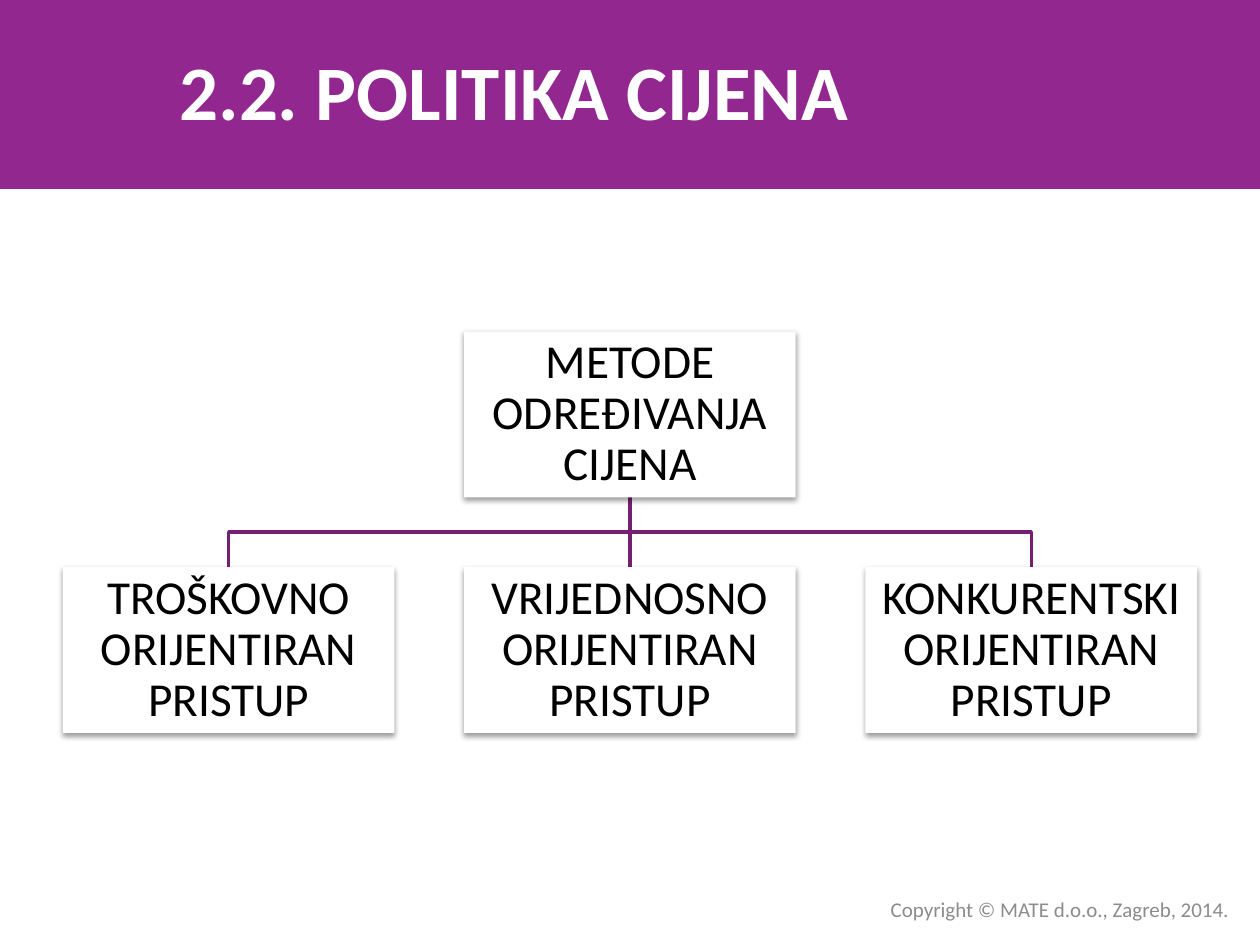
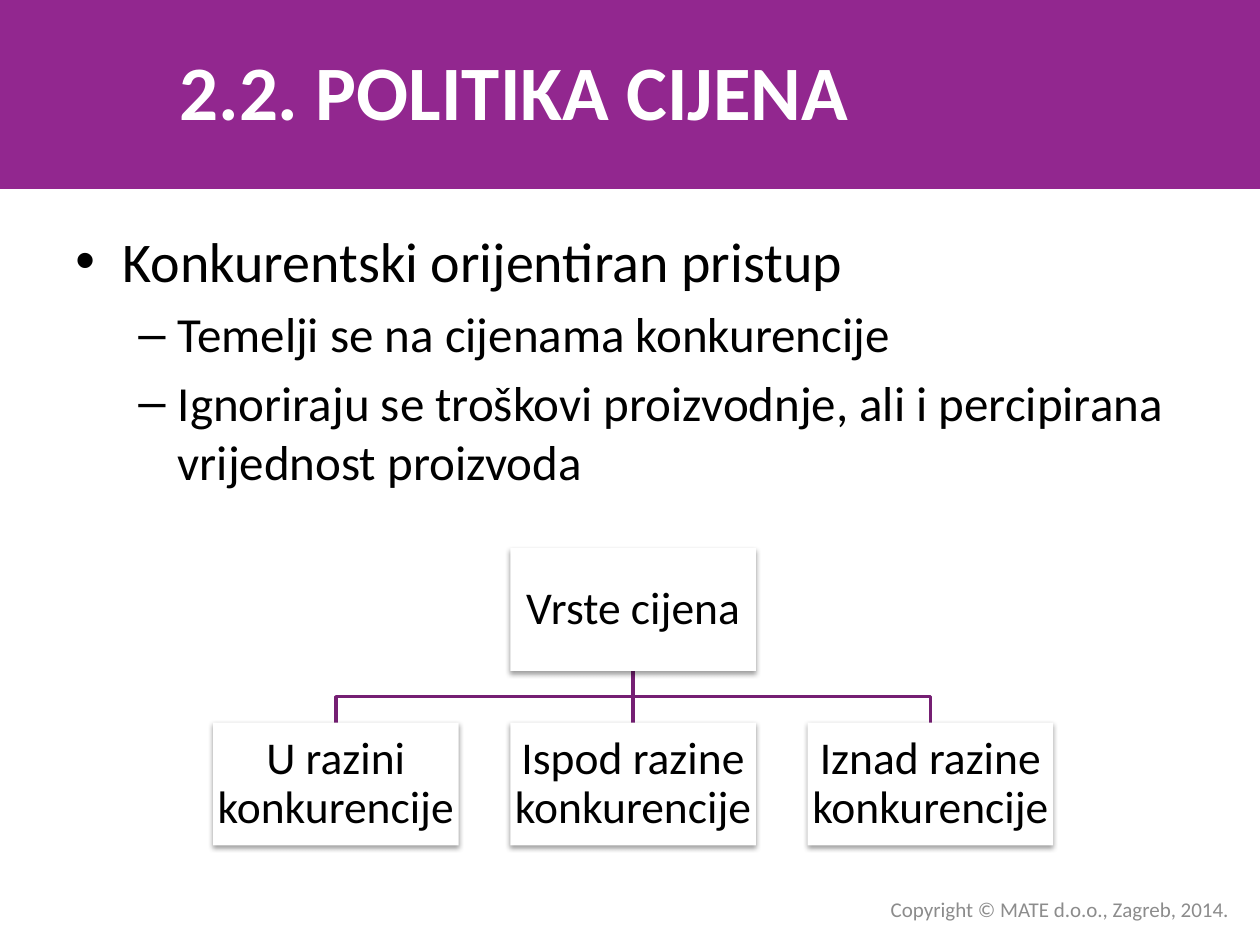
from dataclasses import dataclass

import lxml.etree
import pptx
import pptx.dml.color
import pptx.enum.shapes
import pptx.enum.text
import pptx.oxml.ns
import pptx.util

Pt = pptx.util.Pt
Align = pptx.enum.text.PP_ALIGN
Anchor = pptx.enum.text.MSO_ANCHOR


@dataclass(frozen=True)
class Theme:
    font: str = "Calibri"
    band: str = "92278F"
    link: str = "751F73"
    paper: str = "FFFFFF"
    ink: str = "000000"
    muted: str = "8C8C8C"
    title_size: float = 44
    topic_size: float = 32
    detail_size: float = 28
    footer_size: float = 12
    link_width: float = 2


@dataclass(frozen=True)
class Bullet:
    text: str
    level: int = 0


@dataclass(frozen=True)
class BulletStyle:
    mark: str
    size: float
    margin: float
    hanging: float


@dataclass(frozen=True)
class Tree:
    root: str
    branches: tuple[str, ...]
    centre: float
    top: float
    box_width: float
    size: float


THEME = Theme()
TITLE = "2.2. POLITIKA CIJENA"
FOOTER = "Copyright © MATE d.o.o., Zagreb, 2014."
COLUMN_STEP = 1.21
ROW_STEP = 1.42
BULLET_STYLES = (
    BulletStyle("•", THEME.topic_size, 27, 27),
    BulletStyle("–", THEME.detail_size, 58.5, 22.5),
)
METHODS = Tree(
    "METODE ODREĐIVANJA CIJENA",
    (
        "TROŠKOVNO ORIJENTIRAN PRISTUP",
        "VRIJEDNOSNO ORIJENTIRAN PRISTUP",
        "KONKURENTSKI ORIJENTIRAN PRISTUP",
    ),
    centre=360, top=189.5, box_width=189.5, size=27,
)
PRICE_TYPES = Tree(
    "Vrste cijena",
    ("U razini konkurencije", "Ispod razine konkurencije", "Iznad razine konkurencije"),
    centre=361.8, top=313.2, box_width=140.4, size=26,
)
COMPETITION = (
    Bullet("Konkurentski orijentiran pristup"),
    Bullet("Temelji se na cijenama konkurencije", 1),
    Bullet("Ignoriraju se troškovi proizvodnje, ali i percipirana vrijednost proizvoda", 1),
)


def color(value: str) -> pptx.dml.color.RGBColor:
    return pptx.dml.color.RGBColor.from_string(value)


def add_element(parent, tag: str, **attributes):
    element = lxml.etree.SubElement(parent, pptx.oxml.ns.qn(tag))
    for name, value in attributes.items():
        element.set(name, str(value))
    return element


def write(paragraph, text: str, *, size: float, ink: str = THEME.ink, bold: bool = False,
          align=Align.LEFT, line_spacing: float = 1.0) -> None:
    paragraph.alignment = align
    paragraph.line_spacing = line_spacing
    run = paragraph.add_run()
    run.text = text
    run.font.name = THEME.font
    run.font.size = Pt(size)
    run.font.bold = bold
    run.font.color.rgb = color(ink)


def prepare_frame(shape, anchor, inset: float | None = None):
    frame = shape.text_frame
    frame.word_wrap = True
    frame.auto_size = pptx.enum.text.MSO_AUTO_SIZE.NONE
    frame.vertical_anchor = anchor
    if inset is not None:
        frame.margin_left = frame.margin_right = Pt(inset)
        frame.margin_top = frame.margin_bottom = Pt(inset)
    return frame


def add_rectangle(slide, left: float, top: float, width: float, height: float, fill: str):
    shape = slide.shapes.add_shape(
        pptx.enum.shapes.MSO_SHAPE.RECTANGLE, Pt(left), Pt(top), Pt(width), Pt(height))
    shape.fill.solid()
    shape.fill.fore_color.rgb = color(fill)
    shape.line.fill.background()
    shape.shadow.inherit = False
    return shape


def add_text_box(slide, left: float, top: float, width: float, height: float, anchor):
    box = slide.shapes.add_textbox(Pt(left), Pt(top), Pt(width), Pt(height))
    return prepare_frame(box, anchor)


def add_titled_slide(presentation):
    slide = presentation.slides.add_slide(presentation.slide_layouts[5])
    title = slide.shapes.title
    add_rectangle(slide, 0, 0, 720, 108, THEME.band)
    title.element.getparent().append(title.element)
    title.left, title.top, title.width, title.height = Pt(0), Pt(6), Pt(588), Pt(90)
    write(prepare_frame(title, Anchor.MIDDLE).paragraphs[0], TITLE,
          size=THEME.title_size, ink=THEME.paper, bold=True, align=Align.CENTER)
    footer = add_text_box(slide, 337.5, 508.5, 372, 21.6, Anchor.MIDDLE)
    write(footer.paragraphs[0], FOOTER, size=THEME.footer_size,
          ink=THEME.muted, align=Align.RIGHT)
    return slide


def add_card(slide, text: str, centre: float, top: float, tree: Tree) -> None:
    card = add_rectangle(slide, centre - tree.box_width / 2, top,
                         tree.box_width, tree.box_width / 2, THEME.paper)
    effects = card.element.spPr.find(pptx.oxml.ns.qn("a:effectLst"))
    shadow = add_element(effects, "a:outerShdw", blurRad=Pt(3.1), dist=Pt(1.6),
                         dir=90 * 60000, rotWithShape=0)
    shade = add_element(shadow, "a:srgbClr", val=THEME.ink)
    add_element(shade, "a:alpha", val=38000)
    write(prepare_frame(card, Anchor.MIDDLE, 1.5).paragraphs[0], text,
          size=tree.size, align=Align.CENTER, line_spacing=0.9)


def add_link(slide, start: float, end: float, top: float, bottom: float) -> None:
    if start == end:
        link = slide.shapes.add_connector(
            pptx.enum.shapes.MSO_CONNECTOR.STRAIGHT, Pt(start), Pt(top), Pt(end), Pt(bottom))
    else:
        middle = (top + bottom) / 2
        builder = slide.shapes.build_freeform(Pt(start), Pt(top))
        corners = ((start, middle), (end, middle), (end, bottom))
        builder.add_line_segments([(Pt(x), Pt(y)) for x, y in corners], close=False)
        link = builder.convert_to_shape()
        link.fill.background()
    link.line.color.rgb = color(THEME.link)
    link.line.width = Pt(THEME.link_width)
    add_element(link.element.spPr, "a:effectLst")


def add_tree(slide, tree: Tree) -> None:
    box_height = tree.box_width / 2
    branch_top = tree.top + box_height * ROW_STEP
    middle = (len(tree.branches) - 1) / 2
    centres = [tree.centre + (index - middle) * tree.box_width * COLUMN_STEP
               for index in range(len(tree.branches))]
    for centre in centres:
        add_link(slide, tree.centre, centre, tree.top + box_height, branch_top)
    add_card(slide, tree.root, tree.centre, tree.top, tree)
    for text, centre in zip(tree.branches, centres):
        add_card(slide, text, centre, branch_top, tree)


def add_bullets(slide, bullets: tuple[Bullet, ...]) -> None:
    frame = add_text_box(slide, 36, 126, 648, 356.4, Anchor.TOP)
    for index, bullet in enumerate(bullets):
        style = BULLET_STYLES[bullet.level]
        paragraph = frame.add_paragraph() if index else frame.paragraphs[0]
        paragraph.level = bullet.level
        if index:
            paragraph.space_before = Pt(style.size * 0.2)
        properties = paragraph._p.get_or_add_pPr()
        properties.set("marL", str(Pt(style.margin)))
        properties.set("indent", str(-Pt(style.hanging)))
        add_element(properties, "a:buFont", typeface="Arial")
        add_element(properties, "a:buChar", char=style.mark)
        write(paragraph, bullet.text, size=style.size)


def main() -> None:
    presentation = pptx.Presentation()
    presentation.slide_width, presentation.slide_height = Pt(720), Pt(540)
    add_tree(add_titled_slide(presentation), METHODS)
    competition_slide = add_titled_slide(presentation)
    add_bullets(competition_slide, COMPETITION)
    add_tree(competition_slide, PRICE_TYPES)
    presentation.save("out.pptx")


if __name__ == "__main__":
    main()
